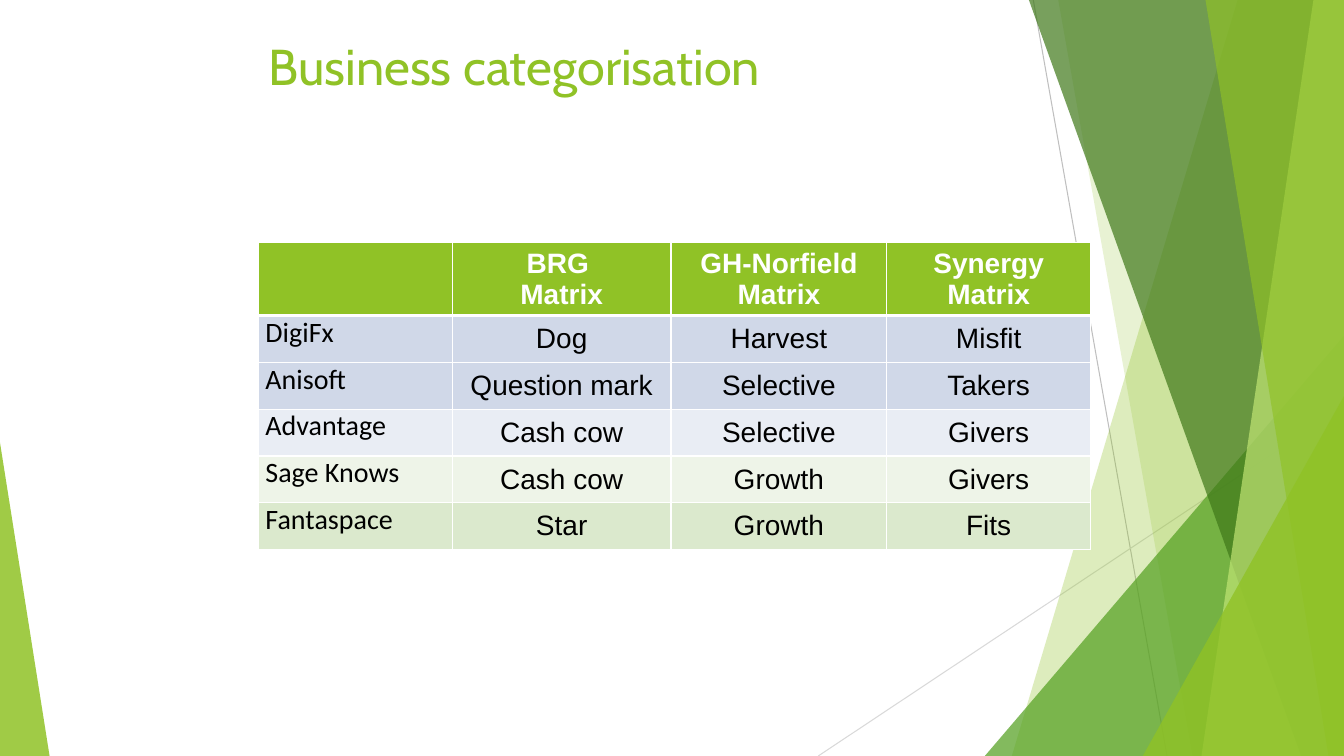
from dataclasses import dataclass

from lxml.etree import SubElement
from pptx import Presentation
from pptx.dml.color import RGBColor
from pptx.enum.shapes import MSO_CONNECTOR, MSO_SHAPE
from pptx.enum.text import MSO_ANCHOR, PP_ALIGN
from pptx.oxml import parse_xml
from pptx.oxml.ns import nsdecls, qn
from pptx.util import Cm, Pt

WIDTH, HEIGHT = 33.87, 19.05
WHITE = RGBColor(0xFF, 0xFF, 0xFF)
BLACK = RGBColor(0x00, 0x00, 0x00)
LIME = RGBColor(0x90, 0xC2, 0x26)
PALE_LIME = RGBColor(0xC0, 0xE4, 0x74)
GREEN = RGBColor(0x54, 0xA0, 0x21)
DARK_GREEN = RGBColor(0x3F, 0x78, 0x19)
GREY = RGBColor(0xBF, 0xBF, 0xBF)
LIGHT_GREY = RGBColor(0xD9, 0xD9, 0xD9)
BLUE_ROW = RGBColor(0xD0, 0xD8, 0xE8)
PALE_BLUE_ROW = RGBColor(0xE9, 0xED, 0xF4)
PALE_GREEN_ROW = RGBColor(0xEE, 0xF4, 0xE8)
GREEN_ROW = RGBColor(0xDB, 0xE9, 0xCD)


@dataclass
class Ray:
    start: tuple[float, float]
    end: tuple[float, float]
    color: RGBColor


@dataclass
class Band:
    """Area from a slanted left edge to the right side of the slide."""
    top_x: float
    bottom_x: float
    color: RGBColor
    alpha: int


@dataclass
class Corner:
    """Right triangle standing on the bottom of the slide."""
    left: float
    top: float
    width: float
    apex: float
    color: RGBColor
    alpha: int


@dataclass
class Business:
    name: str
    ratings: tuple[str, ...]
    fill: RGBColor


RAYS = [
    Ray((26.04, 0), (29.41, HEIGHT), GREY),
    Ray((WIDTH, 10.24), (20.62, HEIGHT), LIGHT_GREY),
]
FACETS = [
    Band(31.19, 25.5, LIME, 30),
    Band(26.67, 30.05, LIME, 20),
    Corner(24.82, 8.46, 9.05, 1, GREEN, 72),
    Band(25.93, 32.79, DARK_GREEN, 70),
    Band(33.1, 30.28, PALE_LIME, 70),
    Band(30.38, 33.48, LIME, 65),
    Corner(28.8, 9.98, 5.07, 1, LIME, 80),
    Corner(0, 11.15, 1.25, 0, LIME, 85),
]
HEADERS = [(), ("BRG ", "Matrix"), ("GH-Norfield", "Matrix"), ("Synergy Matrix",)]
BUSINESSES = [
    Business("DigiFx", ("Dog", "Harvest", "Misfit"), BLUE_ROW),
    Business("Anisoft", ("Question mark", "Selective", "Takers"), BLUE_ROW),
    Business("Advantage", ("Cash cow", "Selective", "Givers"), PALE_BLUE_ROW),
    Business("Sage Knows", ("Cash cow", "Growth", "Givers"), PALE_GREEN_ROW),
    Business("Fantaspace", ("Star", "Growth", "Fits"), GREEN_ROW),
]
COLUMN_WIDTHS = [4.9, 5.51, 5.44, 5.13]
HEADER_HEIGHT, ROW_HEIGHT = 1.83, 1.18


def add_run(p, text: str, font: str, size: float, color: RGBColor, bold: bool = False) -> None:
    r = p.add_run()
    r.text = text
    r.font.name = font
    r.font.size = Pt(size)
    r.font.color.rgb = color
    r.font.bold = bold


def draw_ray(s, ray: Ray) -> None:
    sp = s.shapes.add_connector(
        MSO_CONNECTOR.STRAIGHT, *map(Cm, ray.start), *map(Cm, ray.end))
    sp.line.color.rgb = ray.color
    sp.line.width = Pt(0.75)
    SubElement(sp.element.spPr, qn("a:effectLst"))


def draw_facet(s, facet: Band | Corner) -> None:
    if isinstance(facet, Band):
        outline = s.shapes.build_freeform(Cm(facet.top_x), 0)
        outline.add_line_segments([
            (Cm(WIDTH), 0), (Cm(WIDTH), Cm(HEIGHT)), (Cm(facet.bottom_x), Cm(HEIGHT))])
        sp = outline.convert_to_shape()
    else:
        sp = s.shapes.add_shape(
            MSO_SHAPE.ISOSCELES_TRIANGLE, Cm(facet.left), Cm(facet.top),
            Cm(facet.width), Cm(HEIGHT - facet.top))
        sp.adjustments[0] = facet.apex
    sp.shadow.inherit = False
    sp.line.fill.background()
    sp.fill.solid()
    sp.fill.fore_color.rgb = facet.color
    color = sp.element.spPr.find(f"{qn('a:solidFill')}/{qn('a:srgbClr')}")
    SubElement(color, qn("a:alpha")).set("val", str(facet.alpha * 1000))


def set_borders(cell, bottom: float = 1) -> None:
    tc_pr = cell._tc.get_or_add_tcPr()
    widths = {"lnL": 1, "lnR": 1, "lnT": 1, "lnB": bottom}
    for i, (side, width) in enumerate(widths.items()):
        tc_pr.insert(i, parse_xml(
            f'<a:{side} {nsdecls("a")} w="{Pt(width)}"><a:solidFill>'
            f'<a:srgbClr val="{WHITE}"/></a:solidFill></a:{side}>'))


def fill_cell(cell, lines: tuple[str, ...], fill: RGBColor, color: RGBColor = BLACK,
              header: bool = False, label: bool = False) -> None:
    cell.fill.solid()
    cell.fill.fore_color.rgb = fill
    set_borders(cell, 3 if header else 1)
    if label:
        cell.margin_left = cell.margin_right = Cm(0.19)
        cell.margin_top = cell.margin_bottom = 0
    else:
        cell.vertical_anchor = MSO_ANCHOR.MIDDLE
    tf = cell.text_frame
    for i, line in enumerate(lines):
        p = tf.add_paragraph() if i else tf.paragraphs[0]
        p.alignment = PP_ALIGN.LEFT if label else PP_ALIGN.CENTER
        add_run(p, line, "Calibri" if label else "Arial", 20, color, header)


def draw_table(s) -> None:
    height = HEADER_HEIGHT + ROW_HEIGHT * len(BUSINESSES)
    table = s.shapes.add_table(
        len(BUSINESSES) + 1, len(COLUMN_WIDTHS), Cm(6.5), Cm(6.12),
        Cm(sum(COLUMN_WIDTHS)), Cm(height)).table
    for column, width in zip(table.columns, COLUMN_WIDTHS):
        column.width = Cm(width)
    for i, row in enumerate(table.rows):
        row.height = Cm(ROW_HEIGHT if i else HEADER_HEIGHT)
    for col, lines in enumerate(HEADERS):
        fill_cell(table.cell(0, col), lines, LIME, WHITE, header=True)
    for row, business in enumerate(BUSINESSES, 1):
        fill_cell(table.cell(row, 0), (business.name,), business.fill, label=True)
        for col, rating in enumerate(business.ratings, 1):
            fill_cell(table.cell(row, col), (rating,), business.fill)


def place_title(s) -> None:
    """Bring the title in front of the facets and format it."""
    title = s.shapes.title
    title.element.getparent().append(title.element)
    title.left, title.top, title.width, title.height = Cm(5.51), Cm(0.76), Cm(22.86), Cm(3.18)
    tf = title.text_frame
    tf.word_wrap = True
    tf.vertical_anchor = MSO_ANCHOR.TOP
    p = tf.paragraphs[0]
    p.alignment = PP_ALIGN.LEFT
    p_pr = p._p.get_or_add_pPr()
    p_pr.set("marL", str(Cm(1)))
    p_pr.set("indent", "0")
    add_run(p, "Business categorisation", "Cabin", 36, LIME)


def main() -> None:
    prs = Presentation()
    prs.slide_width, prs.slide_height = Cm(WIDTH), Cm(HEIGHT)
    s = prs.slides.add_slide(prs.slide_layouts.get_by_name("Title Only"))
    for ray in RAYS:
        draw_ray(s, ray)
    for facet in FACETS:
        draw_facet(s, facet)
    place_title(s)
    draw_table(s)
    prs.save("out.pptx")


if __name__ == "__main__":
    main()
